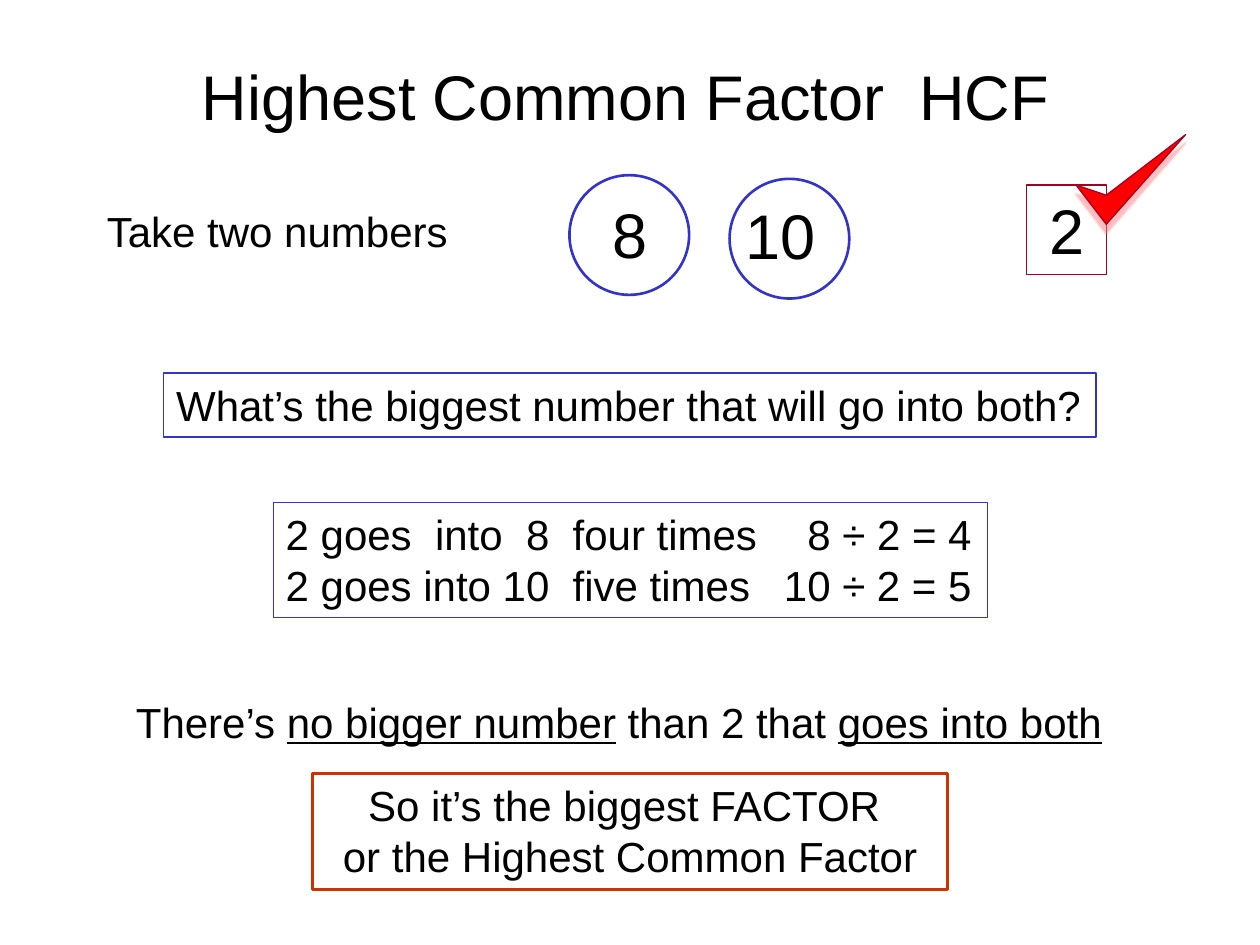
"""Build a slide that explains the highest common factor of 8 and 10."""
from dataclasses import dataclass
from typing import Optional

from lxml.etree import SubElement
from pptx import Presentation
from pptx.dml.color import RGBColor
from pptx.enum.shapes import MSO_SHAPE
from pptx.enum.text import MSO_ANCHOR, PP_ALIGN
from pptx.oxml.ns import qn
from pptx.shapes.autoshape import Shape
from pptx.slide import Slide
from pptx.text.text import TextFrame
from pptx.util import Pt

BLACK = RGBColor(0x00, 0x00, 0x00)
BLUE = RGBColor(0x33, 0x33, 0xCC)
RUST = RGBColor(0xCC, 0x33, 0x00)
WINE = RGBColor(0xA5, 0x00, 0x21)
RED = RGBColor(0xFF, 0x00, 0x00)
PINK = RGBColor(0xFF, 0x7C, 0x80)

Area = tuple[float, float, float, float]
Run = tuple[str, bool]


@dataclass
class Note:
    area: Area
    lines: list[list[Run]]
    size: float = 24
    align: PP_ALIGN = PP_ALIGN.LEFT
    wrap: bool = True
    edge: Optional[RGBColor] = None
    width: float = 0.75
    tab: float = 0


@dataclass
class Ring:
    area: Area
    label: Note


def plain(text: str) -> list[Run]:
    return [(text, False)]


NOTES = [
    Note((54, 113.8, 211.7, 36), [plain("Take two numbers")], wrap=False),
    Note((93.6, 213.1, 532.8, 36.7),
         [plain("What’s the biggest number that will go into both?")],
         wrap=False, edge=BLUE),
    Note((156.2, 287.3, 408.2, 65.5),
         [plain("2 goes  into  8  four times\t8 ÷ 2 = 4"),
          plain("2 goes into 10  five times\t10 ÷ 2 = 5")],
         edge=BLUE, tab=392),
    Note((70.6, 394.6, 578.2, 36),
         [[("There’s ", False), ("no bigger number", True),
           (" than 2 that ", False), ("goes into both", True)]]),
    Note((178.6, 442.1, 362.9, 66.2),
         [plain("So it’s the biggest FACTOR "),
          plain("or the Highest Common Factor")],
         align=PP_ALIGN.CENTER, edge=RUST, width=1.5),
    Note((586.8, 105.8, 45.4, 51.1), [plain("2")], size=36,
         align=PP_ALIGN.CENTER, edge=WINE),
]
RINGS = [
    Ring((325.4, 100.1, 68.4, 68.4),
         Note((342.7, 108, 34.6, 50.4), [plain("8")], size=36, wrap=False)),
    Ring((416.9, 102.2, 68.4, 68.4),
         Note((419, 108.7, 54.7, 50.4), [plain("10")], size=36, wrap=False)),
]
TICK = [(614.9, 105.8), (632.2, 128.2), (677.5, 77), (632.2, 111.6)]


def write(frame: TextFrame, note: Note) -> None:
    frame.word_wrap = note.wrap
    for num, line in enumerate(note.lines):
        para = frame.add_paragraph() if num else frame.paragraphs[0]
        para.alignment = note.align
        if note.tab:
            tabs = SubElement(para._p.get_or_add_pPr(), qn("a:tabLst"))
            SubElement(tabs, qn("a:tab"), pos=str(Pt(note.tab)), algn="r")
        for text, under in line:
            run = para.add_run()
            run.text = text
            font = run.font
            font.name, font.size = "Arial", Pt(note.size)
            font.color.rgb = BLACK
            if under:
                font.underline = True


def outline(shape: Shape, color: RGBColor, width: float) -> None:
    shape.shadow.inherit = False
    shape.fill.background()
    shape.line.color.rgb = color
    shape.line.width = Pt(width)


def add_note(slide: Slide, note: Note) -> None:
    area = [Pt(val) for val in note.area]
    if note.edge is None:
        shape = slide.shapes.add_textbox(*area)
    else:
        shape = slide.shapes.add_shape(MSO_SHAPE.RECTANGLE, *area)
        outline(shape, note.edge, note.width)
    shape.text_frame.vertical_anchor = MSO_ANCHOR.TOP
    write(shape.text_frame, note)


def add_ring(slide: Slide, ring: Ring) -> None:
    add_note(slide, ring.label)
    area = [Pt(val) for val in ring.area]
    outline(slide.shapes.add_shape(MSO_SHAPE.OVAL, *area), BLUE, 1.5)


def add_tick(slide: Slide) -> None:
    first, *rest = [(Pt(left), Pt(top)) for left, top in TICK]
    form = slide.shapes.build_freeform(*first)
    form.add_line_segments(rest, close=True)
    tick = form.convert_to_shape()
    outline(tick, WINE, 0.75)
    tick.fill.solid()
    tick.fill.fore_color.rgb = RED
    glow = SubElement(tick._element.spPr.find(qn("a:effectLst")),
                      qn("a:outerShdw"), blurRad=str(Pt(1)),
                      dist=str(Pt(5)), dir="5400000", rotWithShape="0")
    tint = SubElement(glow, qn("a:srgbClr"), val=str(PINK))
    SubElement(tint, qn("a:alpha"), val="50000")


def add_title(slide: Slide) -> None:
    title = slide.shapes.title
    title.left, title.top = Pt(25.2), Pt(9.4)
    title.width, title.height = Pt(664.6), Pt(90)
    title.text_frame.vertical_anchor = MSO_ANCHOR.MIDDLE
    note = Note((0, 0, 0, 0), [plain("Highest Common Factor  HCF")],
                size=36, align=PP_ALIGN.CENTER)
    write(title.text_frame, note)


def main() -> None:
    deck = Presentation()
    deck.slide_width, deck.slide_height = Pt(720), Pt(540)
    slide = deck.slides.add_slide(deck.slide_layouts[5])
    add_title(slide)
    for ring in RINGS:
        add_ring(slide, ring)
    for note in NOTES:
        add_note(slide, note)
    add_tick(slide)
    deck.save("out.pptx")


if __name__ == "__main__":
    main()
